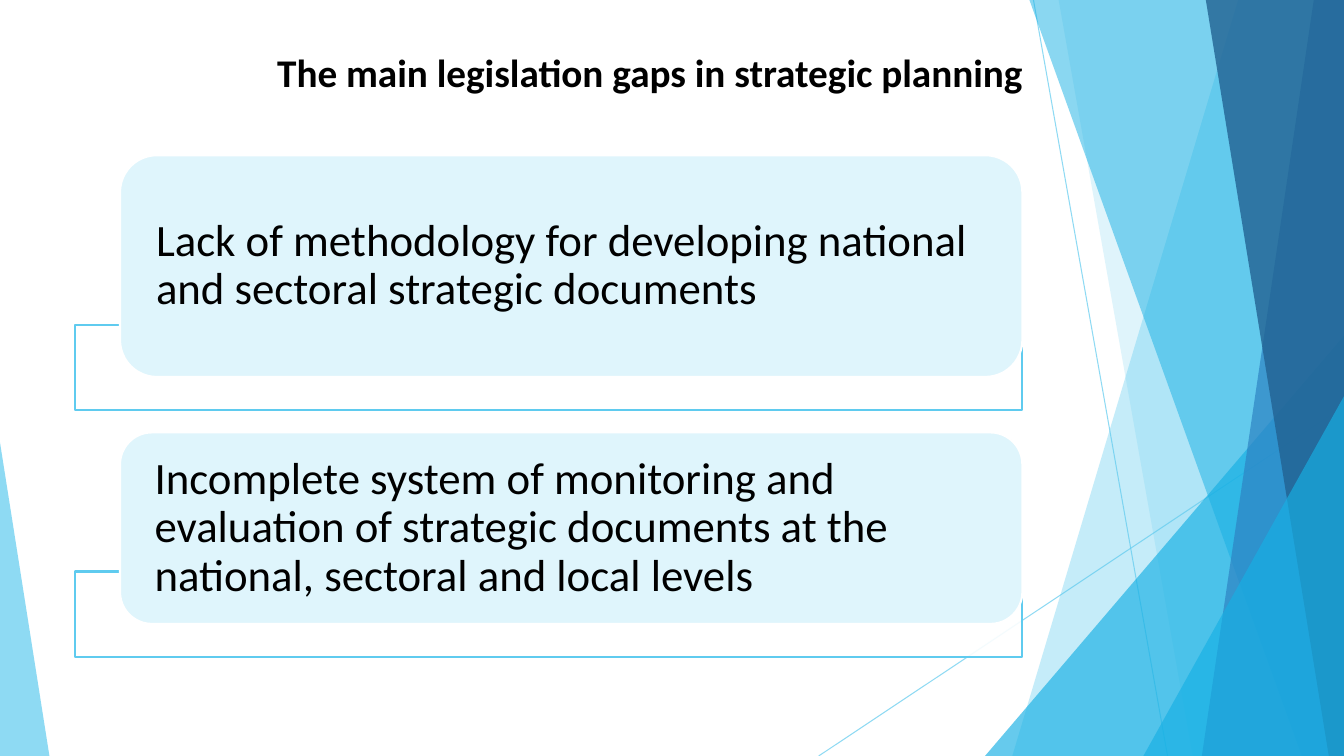
import pptx
import pptx.util
import pptx.dml.color
import pptx.enum.shapes
import pptx.enum.text
import pptx.oxml
import pptx.oxml.ns

# Content
TITLE = "The main legislation gaps in strategic planning"
GAPS = [  # text, card height
    ("Lack of methodology for developing national and sectoral strategic documents", 2.2),
    ("Incomplete system of monitoring and evaluation of strategic documents "
     "at the national, sectoral and local levels", 1.9),
]

# Layout in inches
WIDTH, HEIGHT = 13.33, 7.5
FRAME_LEFT, FRAME_TOP, FRAME_WIDTH, FRAME_HEIGHT = 0.74, 3.22, 9.4, 0.85
FRAME_PITCH, CARD_OVERLAP, CARD_INDENT = 2.45, 0.52, 0.45
FONT, SKY, AZURE = "Calibri", "5FCBEF", "17B0E4"

# Background decoration, back to front
RAYS = [((10.25, 0), (11.58, HEIGHT)), ((WIDTH, 4.03), (8.12, HEIGHT))]
# Bands run to the right edge: top-left x, bottom-left x, colour, opacity
# Triangles: left, top, width, apex share, colour, opacity
FACETS = [
    ("band", (12.28, 10.04), SKY, 36),
    ("band", (10.5, 11.83), SKY, 20),
    ("triangle", (9.77, 3.33, 3.56, 1), AZURE, 66),
    ("band", (10.21, 12.91), AZURE, 50),
    ("band", (13.03, 11.92), "2E83C3", 70),
    ("band", (11.96, 13.18), "226292", 80),
    ("triangle", (11.34, 3.93, 1.99, 1), AZURE, 66),
    ("triangle", (0, 4.39, 0.49, 0), SKY, 70),
]

inches = pptx.util.Inches
SHAPES = pptx.enum.shapes.MSO_SHAPE


def color(value):
    return pptx.dml.color.RGBColor.from_string(value)


def set_opacity(properties, percent):
    for fill_color in properties.iter(pptx.oxml.ns.qn("a:srgbClr")):
        alpha = pptx.oxml.parse_xml(
            f'<a:alpha {pptx.oxml.ns.nsdecls("a")} val="{percent * 1000}"/>')
        fill_color.append(alpha)


def paint(shape, fill, opacity=100, line=None):
    shape.shadow.inherit = False
    shape.fill.solid()
    shape.fill.fore_color.rgb = color(fill)
    if opacity < 100:
        set_opacity(shape.fill._xPr, opacity)
    if line:
        shape.line.color.rgb = color(line)
        shape.line.width = pptx.util.Pt(1.5)
    else:
        shape.line.fill.background()


def add_box(slide, kind, left, top, width, height):
    return slide.shapes.add_shape(
        kind, inches(left), inches(top), inches(width), inches(height))


def add_ray(slide, start, end):
    ray = slide.shapes.add_connector(
        pptx.enum.shapes.MSO_CONNECTOR.STRAIGHT, *map(inches, start + end))
    ray.line.color.rgb = color(SKY)
    ray.line.width = pptx.util.Pt(0.75)
    properties = ray._element.spPr
    set_opacity(properties, 70)
    properties.append(pptx.oxml.parse_xml(f'<a:effectLst {pptx.oxml.ns.nsdecls("a")}/>'))


def add_facet(slide, kind, geometry, fill, opacity):
    if kind == "band":
        top_left, bottom_left = geometry
        builder = slide.shapes.build_freeform(inches(top_left), 0)
        corners = [(WIDTH, 0), (WIDTH, HEIGHT), (bottom_left, HEIGHT)]
        builder.add_line_segments([(inches(x), inches(y)) for x, y in corners])
        facet = builder.convert_to_shape()
    else:
        left, top, width, apex = geometry
        facet = add_box(slide, SHAPES.ISOSCELES_TRIANGLE, left, top, width, HEIGHT - top)
        facet.adjustments[0] = apex
    paint(facet, fill, opacity)


def format_text(frame, text, size, anchor, alignment, bold=False):
    frame.text = text
    frame.word_wrap = True
    frame.vertical_anchor = anchor
    paragraph = frame.paragraphs[0]
    paragraph.alignment = alignment
    paragraph.font.name = FONT
    paragraph.font.size = pptx.util.Pt(size)
    paragraph.font.bold = bold
    paragraph.font.color.rgb = color("000000")
    return paragraph


def add_gap(slide, index, text, card_height):
    frame_top = FRAME_TOP + index * FRAME_PITCH
    frame = add_box(slide, SHAPES.RECTANGLE,
                    FRAME_LEFT, frame_top, FRAME_WIDTH, FRAME_HEIGHT)
    paint(frame, "FFFFFF", 90, SKY)
    card = add_box(slide, SHAPES.ROUNDED_RECTANGLE, FRAME_LEFT + CARD_INDENT,
                   frame_top + CARD_OVERLAP - card_height,
                   FRAME_WIDTH - CARD_INDENT, card_height)
    paint(card, "DFF5FC", line="FFFFFF")
    text_frame = card.text_frame
    text_frame.margin_left = text_frame.margin_right = inches(0.25)
    text_frame.margin_top = text_frame.margin_bottom = 0
    paragraph = format_text(text_frame, text, 32, pptx.enum.text.MSO_ANCHOR.MIDDLE,
                            pptx.enum.text.PP_ALIGN.LEFT)
    paragraph.line_spacing = 0.9


def main():
    presentation = pptx.Presentation()
    presentation.slide_width = inches(WIDTH)
    presentation.slide_height = inches(HEIGHT)
    slide = presentation.slides.add_slide(presentation.slide_layouts[5])

    # Decoration
    for start, end in RAYS:
        add_ray(slide, start, end)
    for facet in FACETS:
        add_facet(slide, *facet)

    # Title
    title = slide.shapes.title
    title.left, title.top = inches(0.62), inches(0.43)
    title.width, title.height = inches(11.65), inches(0.85)
    format_text(title.text_frame, TITLE, 28, pptx.enum.text.MSO_ANCHOR.TOP,
                pptx.enum.text.PP_ALIGN.CENTER, bold=True)

    # Gap cards over their frames
    for index, (text, card_height) in enumerate(GAPS):
        add_gap(slide, index, text, card_height)

    presentation.save("out.pptx")


if __name__ == "__main__":
    main()
